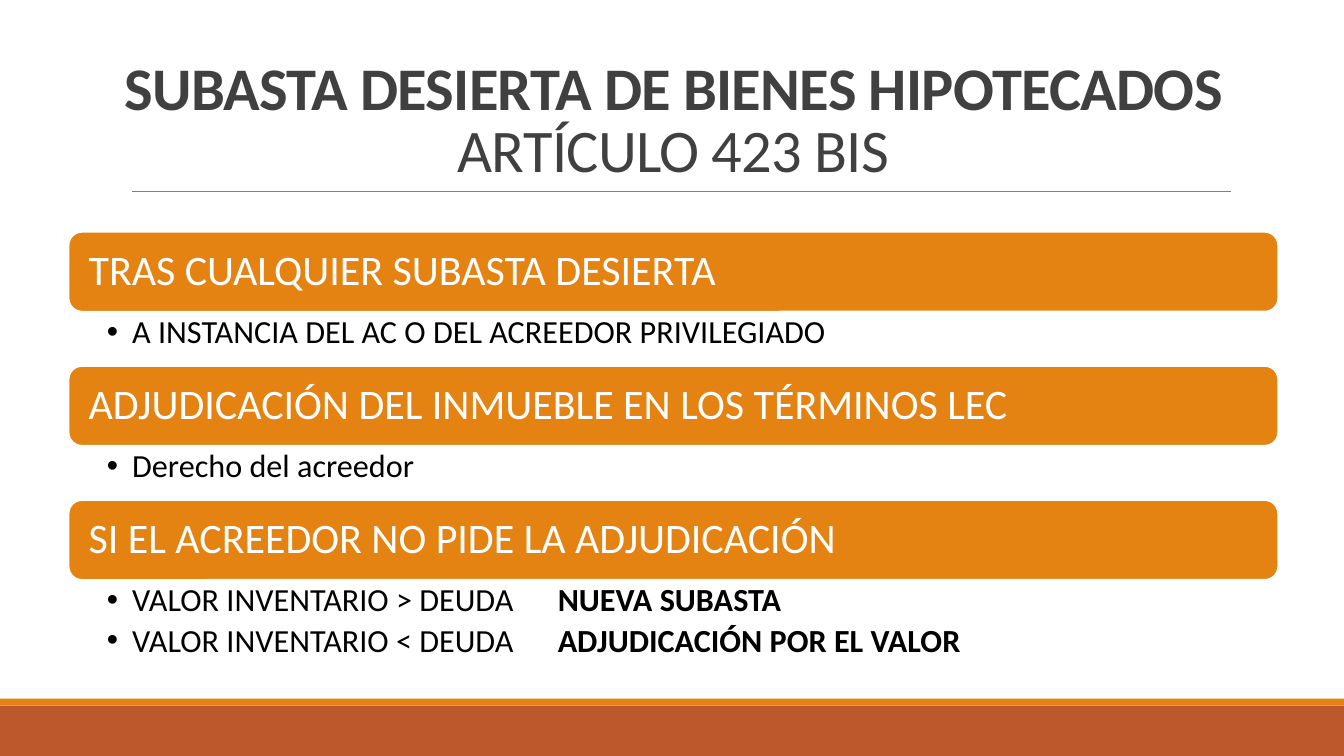
from lxml.etree import SubElement
from pptx import Presentation
from pptx.dml.color import RGBColor
from pptx.enum.shapes import MSO_CONNECTOR, MSO_SHAPE
from pptx.enum.text import MSO_ANCHOR as Anchor, MSO_AUTO_SIZE as AutoSize, PP_ALIGN as Align
from pptx.oxml.ns import qn
from pptx.util import Pt

ORANGE = RGBColor(0xE4, 0x83, 0x12)
RUST = RGBColor(0xBD, 0x58, 0x2C)
GRAY = RGBColor(0x80, 0x80, 0x80)
CHARCOAL = RGBColor(0x40, 0x40, 0x40)
WHITE = RGBColor(0xFF, 0xFF, 0xFF)
BLACK = RGBColor(0x00, 0x00, 0x00)

LEFT, WIDTH = 49, 864
STEPS_TOP, STEP_PITCH, BAR_HEIGHT = 165.6, 95.8, 57
STEPS = [
    ("TRAS CUALQUIER SUBASTA DESIERTA",
     [("A INSTANCIA DEL AC O DEL ACREEDOR PRIVILEGIADO", "")]),
    ("ADJUDICACIÓN DEL INMUEBLE EN LOS TÉRMINOS LEC",
     [("Derecho del acreedor", "")]),
    ("SI EL ACREEDOR NO PIDE LA ADJUDICACIÓN",
     [("VALOR INVENTARIO > DEUDA\t", "NUEVA SUBASTA"),
      ("VALOR INVENTARIO < DEUDA\t", "ADJUDICACIÓN POR EL VALOR")]),
]


def apply(target, formats):
    for name, value in formats.items():
        setattr(target, name, value)


class SlideBuilder:
    font = "Calibri"
    title_size = Pt(43.2)
    heading_size = Pt(30)
    item_size = Pt(23)

    def __init__(self, slide):
        self.slide = slide

    def place(self, shape, left, top, width, height):
        apply(shape, {"left": Pt(left), "top": Pt(top),
                      "width": Pt(width), "height": Pt(height)})

    def frame(self, shape, anchor, left, top, right, bottom):
        apply(shape.text_frame, {
            "word_wrap": True, "auto_size": AutoSize.NONE, "vertical_anchor": anchor,
            "margin_left": Pt(left), "margin_top": Pt(top),
            "margin_right": Pt(right), "margin_bottom": Pt(bottom)})
        return shape.text_frame

    def run(self, paragraph, text, size, color, bold=False):
        run = paragraph.add_run()
        run.text = text
        apply(run.font, {"name": self.font, "size": size, "bold": bold})
        run.font.color.rgb = color
        return run

    def block(self, kind, left, top, width, height, fill):
        block = self.slide.shapes.add_shape(kind, Pt(left), Pt(top), Pt(width), Pt(height))
        block.shadow.inherit = False
        block.fill.solid()
        block.fill.fore_color.rgb = fill
        block.line.fill.background()
        return block

    def rule(self, left, right, y, color, weight):
        rule = self.slide.shapes.add_connector(
            MSO_CONNECTOR.STRAIGHT, Pt(left), Pt(y), Pt(right), Pt(y))
        rule.line.color.rgb = color
        rule.line.width = Pt(weight)
        SubElement(rule.element.spPr, qn("a:effectLst"))

    def title(self, name, article):
        title = self.slide.shapes.title
        self.place(title, LEFT, 49, WIDTH, 86.4)
        paragraph = self.frame(title, Anchor.BOTTOM, 7.2, 3.6, 7.2, 3.6).paragraphs[0]
        apply(paragraph, {"alignment": Align.CENTER, "line_spacing": 0.85})
        name_run = self.run(paragraph, name, self.title_size, CHARCOAL, True)
        paragraph.add_line_break()
        article_run = self.run(paragraph, article, self.title_size, CHARCOAL)
        for run in (name_run, article_run):
            run.font._element.set("spc", "-50")

    def heading(self, text, top):
        bar = self.block(MSO_SHAPE.ROUNDED_RECTANGLE, LEFT, top, WIDTH, BAR_HEIGHT, ORANGE)
        bar.line.color.rgb = WHITE
        bar.line.width = Pt(1.25)
        paragraph = self.frame(bar, Anchor.MIDDLE, 11.5, 8.6, 11.5, 8.6).paragraphs[0]
        apply(paragraph, {"alignment": Align.LEFT, "line_spacing": 0.9})
        self.run(paragraph, text, self.heading_size, WHITE)

    def bullets(self, body, items, top):
        self.place(body, LEFT, top, WIDTH, 15 + 24 * len(items))
        text = self.frame(body, Anchor.TOP, 27.4, 2.9, 16.4, 2.9)
        for index, (condition, outcome) in enumerate(items):
            paragraph = text.add_paragraph() if index else text.paragraphs[0]
            apply(paragraph, {"level": 1, "alignment": Align.LEFT, "line_spacing": 0.9,
                              "space_before": Pt(0), "space_after": Pt(4)})
            self.run(paragraph, condition, self.item_size, BLACK)
            if outcome:
                self.run(paragraph, outcome, self.item_size, BLACK, True)
            self.bullet_format(paragraph)

    def bullet_format(self, paragraph):
        properties = paragraph._p.get_or_add_pPr()
        properties.set("marL", str(Pt(18)))
        properties.set("indent", str(-Pt(18)))
        SubElement(properties, qn("a:buFont"), typeface="Arial")
        SubElement(properties, qn("a:buChar"), char="•")
        tabs = SubElement(properties, qn("a:tabLst"))
        SubElement(tabs, qn("a:tab"), pos=str(Pt(322)), algn="l")


def main():
    deck = Presentation()
    deck.slide_width, deck.slide_height = Pt(960), Pt(540)
    builder = SlideBuilder(deck.slides.add_slide(deck.slide_layouts[4]))
    bodies = list(builder.slide.placeholders)[1:]

    builder.block(MSO_SHAPE.RECTANGLE, 0, 504, 960, 36, RUST)
    builder.block(MSO_SHAPE.RECTANGLE, 0, 499, 960, 5, ORANGE)
    builder.rule(94.3, 879, 136.8, GRAY, 0.5)
    builder.title("SUBASTA DESIERTA DE BIENES HIPOTECADOS", "ARTÍCULO 423 BIS")

    for index, (heading, items) in enumerate(STEPS):
        top = STEPS_TOP + index * STEP_PITCH
        builder.heading(heading, top)
        builder.bullets(bodies[index], items, top + BAR_HEIGHT)

    for unused in bodies[len(STEPS):]:
        unused.element.getparent().remove(unused.element)
    deck.save("out.pptx")


if __name__ == "__main__":
    main()
